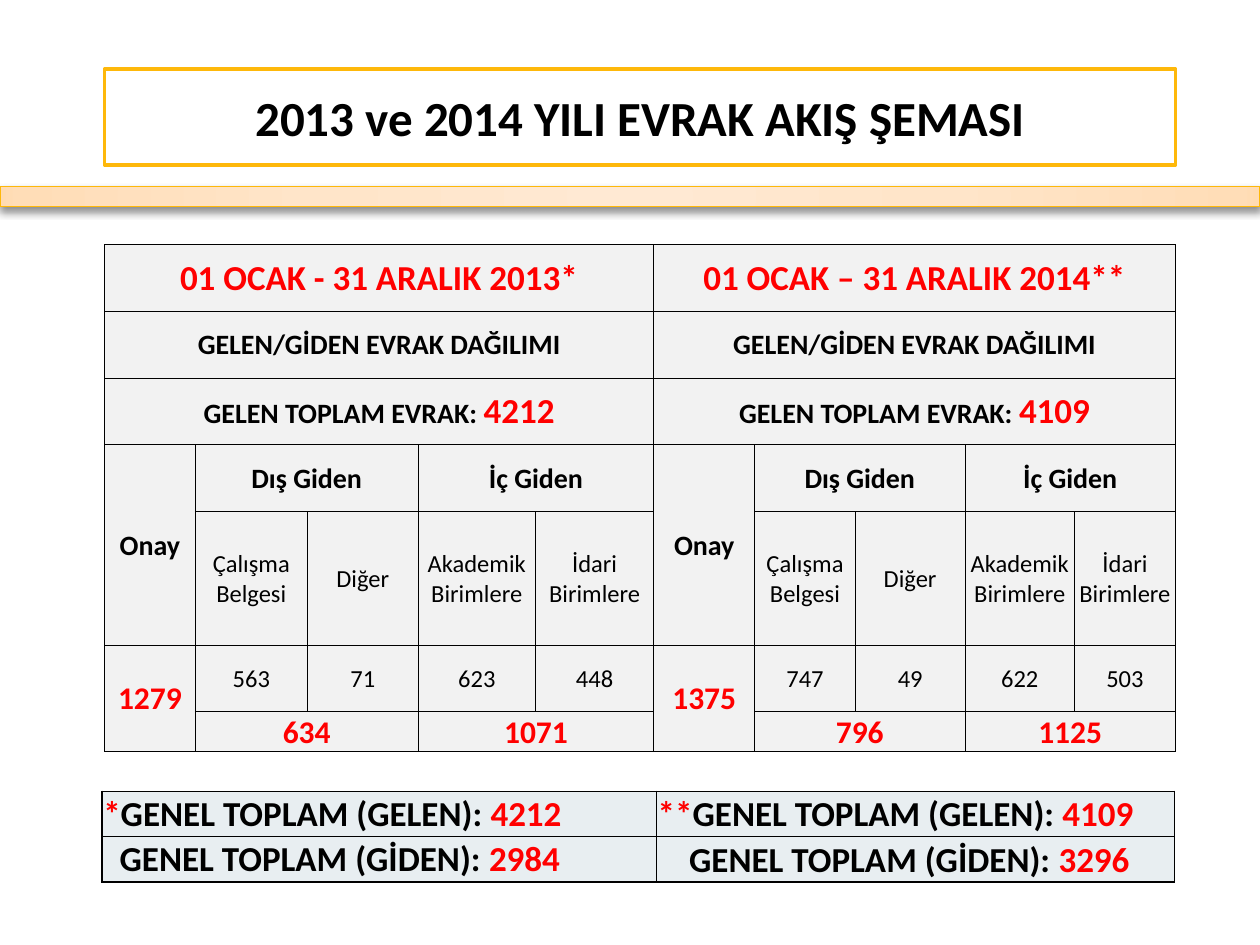
import pptx
import pptx.util
import pptx.oxml
import pptx.oxml.ns
import pptx.dml.color
import pptx.enum.shapes
import pptx.enum.text

Inches = pptx.util.Inches
Pt = pptx.util.Pt
RGB = pptx.dml.color.RGBColor
ALIGN = pptx.enum.text.PP_ALIGN
ANCHOR = pptx.enum.text.MSO_ANCHOR
RECT = pptx.enum.shapes.MSO_SHAPE.RECTANGLE

BLACK = RGB(0x00, 0x00, 0x00)
WHITE = RGB(0xFF, 0xFF, 0xFF)
RED = RGB(0xFF, 0x00, 0x00)
GOLD = RGB(0xFE, 0xB8, 0x0A)
GREY = RGB(0xF2, 0xF2, 0xF2)
MIST = RGB(0xE8, 0xEE, 0xF1)
GLOW = [(0, "FFE9D3"), (50, "FFE5C9"), (97, "FFDDB7"), (100, "FFDBB2")]
NS = pptx.oxml.ns.nsdecls("a")

WIDTHS = [0.72, 0.89, 0.88, 0.93, 0.94, 0.8, 0.8, 0.87, 0.87, 0.8]
HEIGHTS = [0.53, 0.53, 0.53, 0.53, 1.06, 0.53, 0.31]
YEARS = [
    {"head": "01 OCAK - 31 ARALIK 2013*", "mark": "*", "in": "4212",
     "out": "2984", "onay": "1279", "parts": ["563", "71", "623", "448"],
     "sums": ["634", "1071"]},
    {"head": "01 OCAK – 31 ARALIK 2014**", "mark": "**", "in": "4109",
     "out": "3296", "onay": "1375", "parts": ["747", "49", "622", "503"],
     "sums": ["796", "1125"]},
]
UNITS = ["Çalışma Belgesi", "Diğer", "Akademik Birimlere", "İdari Birimlere"]


def write(par, runs, align):
    """Add runs given as (text, size, colour, bold)."""
    par.alignment = align
    for text, size, color, bold in runs:
        run = par.add_run()
        run.text = text
        look = {"name": "Calibri", "size": Pt(size), "bold": bold}
        for key, value in look.items():
            setattr(run.font, key, value)
        run.font.color.rgb = color


def edge(cell, width):
    """Draw black borders on all four sides; they must precede the fill."""
    props = cell._tc.get_or_add_tcPr()
    for spot, side in enumerate(["lnL", "lnR", "lnT", "lnB"]):
        props.insert(spot, pptx.oxml.parse_xml(
            f'<a:{side} {NS} w="{Pt(width)}"><a:solidFill>'
            f'<a:srgbClr val="{BLACK}"/></a:solidFill></a:{side}>'))


def make_grid(slide, box, widths, heights, fill, width):
    frame = slide.shapes.add_table(
        len(heights), len(widths), *map(Inches, box))
    grid = frame.table
    for key in ["first_row", "horz_banding"]:
        setattr(grid, key, False)
    for col, size in zip(grid.columns, widths):
        col.width = Inches(size)
    for row, size in zip(grid.rows, heights):
        row.height = Inches(size)
    look = {"margin_left": Inches(0.01), "margin_right": Inches(0.01),
            "margin_top": Inches(0.01), "margin_bottom": 0,
            "vertical_anchor": ANCHOR.MIDDLE}
    for cell in grid.iter_cells():
        for key, value in look.items():
            setattr(cell, key, value)
        cell.fill.solid()
        cell.fill.fore_color.rgb = fill
        edge(cell, width)
    return grid


def put(grid, row, col, down, across, *runs):
    """Write centred runs in a cell that spans down rows and across columns."""
    cell = grid.cell(row, col)
    if down * across > 1:
        cell.merge(grid.cell(row + down - 1, col + across - 1))
    write(cell.text_frame.paragraphs[0], runs, ALIGN.CENTER)


def fill_year(grid, col, year):
    put(grid, 0, col, 1, 5, (year["head"], 20, RED, True))
    put(grid, 1, col, 1, 5, ("GELEN/GİDEN EVRAK DAĞILIMI", 16, BLACK, True))
    put(grid, 2, col, 1, 5, ("GELEN TOPLAM EVRAK: ", 16, BLACK, True),
        (year["in"], 20, RED, True))
    put(grid, 3, col, 2, 1, ("Onay", 16, BLACK, True))
    put(grid, 5, col, 2, 1, (year["onay"], 18, RED, True))
    for i, name in enumerate(["Dış Giden", "İç Giden"]):
        pair = col + 1 + 2 * i
        put(grid, 3, pair, 1, 2, (name, 16, BLACK, True))
        put(grid, 6, pair, 1, 2, (year["sums"][i], 18, RED, True))
    for i, (unit, part) in enumerate(zip(UNITS, year["parts"])):
        put(grid, 4, col + 1 + i, 1, 1, (unit, 14, BLACK, False))
        put(grid, 5, col + 1 + i, 1, 1, (part, 14, BLACK, False))


def add_flow(slide, box):
    grid = make_grid(slide, box, WIDTHS, HEIGHTS, GREY, 0.5)
    for i, year in enumerate(YEARS):
        fill_year(grid, 5 * i, year)


def add_totals(slide, box):
    grid = make_grid(slide, box, [4.4, 4.11], [0.36, 0.36], MIST, 1)
    for col, (year, indent) in enumerate(zip(YEARS, [0.14, 0.26])):
        top, low = grid.cell(0, col), grid.cell(1, col)
        write(top.text_frame.paragraphs[0],
              [(year["mark"], 20, RED, True),
               ("GENEL TOPLAM (GELEN): ", 20, BLACK, True),
               (year["in"], 20, RED, True)], ALIGN.LEFT)
        low.margin_left = Inches(indent)
        write(low.text_frame.paragraphs[0],
              [("GENEL TOPLAM (GİDEN): ", 20, BLACK, True),
               (year["out"], 20, RED, True)], ALIGN.LEFT)
    grid.cell(1, 1).vertical_anchor = ANCHOR.BOTTOM


def add_rect(slide, box, width):
    shape = slide.shapes.add_shape(RECT, *map(Inches, box))
    shape.shadow.inherit = False
    shape.fill.solid()
    shape.fill.fore_color.rgb = WHITE
    shape.line.color.rgb = GOLD
    shape.line.width = Pt(width)
    return shape


def add_title(slide, box):
    frame = add_rect(slide, box, 2).text_frame
    frame.word_wrap = True
    frame.vertical_anchor = ANCHOR.MIDDLE
    write(frame.paragraphs[0],
          [("2013 ve 2014 YILI EVRAK AKIŞ ŞEMASI", 28, BLACK, True)],
          ALIGN.CENTER)


def add_band(slide, box):
    """Add a bar with a round gradient and a shadow below it."""
    props = add_rect(slide, box, 0.75)._element.spPr
    stops = "".join(
        f'<a:gs pos="{pos * 1000}"><a:srgbClr val="{color}"/></a:gs>'
        for pos, color in GLOW)
    blend = pptx.oxml.parse_xml(
        f'<a:gradFill {NS}><a:gsLst>{stops}</a:gsLst><a:path path="circle">'
        '<a:fillToRect l="50000" t="50000" r="50000" b="50000"/></a:path>'
        '</a:gradFill>')
    props.replace(props.find(pptx.oxml.ns.qn("a:solidFill")), blend)
    shade = pptx.oxml.parse_xml(
        f'<a:outerShdw {NS} blurRad="{Pt(5)}" dist="{Pt(2)}" dir="5400000" '
        'rotWithShape="0"><a:srgbClr val="000000"><a:alpha val="43000"/>'
        '</a:srgbClr></a:outerShdw>')
    props.find(pptx.oxml.ns.qn("a:effectLst")).append(shade)


def main():
    deck = pptx.Presentation()
    deck.slide_width, deck.slide_height = Inches(10), Inches(7.5)
    slide = deck.slides.add_slide(deck.slide_layouts[6])
    add_title(slide, (0.83, 0.55, 8.5, 0.76))
    add_flow(slide, (0.83, 1.94, 8.5, 4.02))
    add_band(slide, (0, 1.48, 10, 0.16))
    add_totals(slide, (0.81, 6.28, 8.51, 0.72))
    deck.save("out.pptx")


if __name__ == "__main__":
    main()
